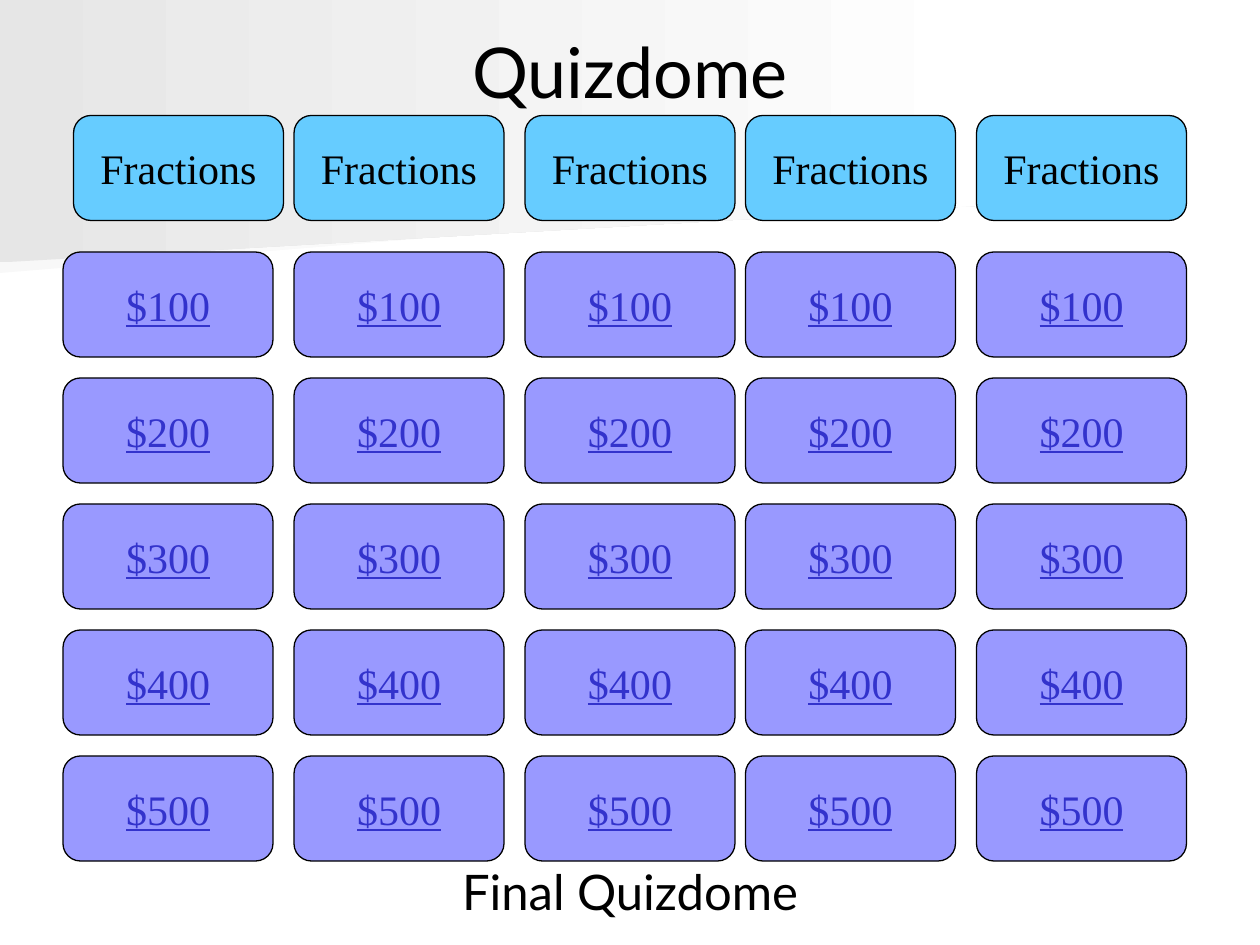
from pptx import Presentation
from pptx.dml.color import RGBColor
from pptx.enum.shapes import MSO_SHAPE as Kind
from pptx.enum.text import MSO_ANCHOR as Anchor, MSO_AUTO_SIZE as Fit, PP_ALIGN as Align
from pptx.util import Pt


def color(code):
    return RGBColor.from_string(code)


def write(frame, text, font="Lato", size=24, ink="000000", line=False, wrap=True):
    frame.auto_size = Fit.NONE
    frame.word_wrap = wrap
    frame.vertical_anchor = Anchor.MIDDLE
    para = frame.paragraphs[0]
    para.alignment = Align.CENTER
    run = para.add_run()
    run.text = text
    run.font.name = font
    run.font.size = Pt(size)
    run.font.color.rgb = color(ink)
    run.font.underline = line


class Board:
    serif = "Times New Roman"
    wide, high = 120, 60

    def __init__(self, slide):
        self.slide = slide
        self.shapes = slide.shapes

    def sweep(self, points, tint):
        start, *rest = [(Pt(x), Pt(y)) for x, y in points]
        form = self.shapes.build_freeform(*start)
        form.add_line_segments(rest, close=True)
        shape = form.convert_to_shape()
        shape.shadow.inherit = False
        shape.line.fill.background()
        shape.fill.gradient()
        shape.fill.gradient_angle = 0
        for stop, code, spot in zip(shape.fill.gradient_stops, (tint, "FFFFFF"), (0, 1)):
            stop.color.rgb = color(code)
            stop.position = spot

    def title(self, text, left, top, wide, high):
        shape = self.shapes.title
        shape.left, shape.top = Pt(left), Pt(top)
        shape.width, shape.height = Pt(wide), Pt(high)
        write(shape.text_frame, text, size=40)
        shape.element.getparent().append(shape.element)

    def label(self, text, left, top, wide, high):
        box = self.shapes.add_textbox(Pt(left), Pt(top), Pt(wide), Pt(high))
        write(box.text_frame, text, size=28)

    def card(self, text, left, top, fill, **style):
        shape = self.shapes.add_shape(
            Kind.FLOWCHART_ALTERNATE_PROCESS,
            Pt(left), Pt(top), Pt(self.wide), Pt(self.high))
        shape.shadow.inherit = False
        shape.fill.solid()
        shape.fill.fore_color.rgb = color(fill)
        shape.line.color.rgb = color("000000")
        shape.line.width = Pt(0.75)
        write(shape.text_frame, text, font=self.serif, wrap=False, **style)


def main():
    deck = Presentation()
    deck.slide_width, deck.slide_height = Pt(720), Pt(540)
    board = Board(deck.slides.add_slide(deck.slide_layouts[5]))

    board.sweep([(560, 110), (0, 156), (0, 73), (561, 73), (560, 92)], "F8F8F8")
    board.sweep([(570, 117), (0, 150), (0, 0), (570, 0)], "E6E6E6")
    board.title("Quizdome", 36, 21.5, 648, 38)

    lefts = [36, 168, 300, 426, 558]
    for left in [42] + lefts[1:]:
        board.card("Fractions", left, 66, "66CCFF")
    for left in lefts:
        for row in range(5):
            board.card(f"${100 * (row + 1)}", left, 144 + 72 * row, "9999FF",
                       ink="3333CC", line=True)

    board.label("Final Quizdome", 36, 490, 648, 38)
    deck.save("out.pptx")


if __name__ == "__main__":
    main()
